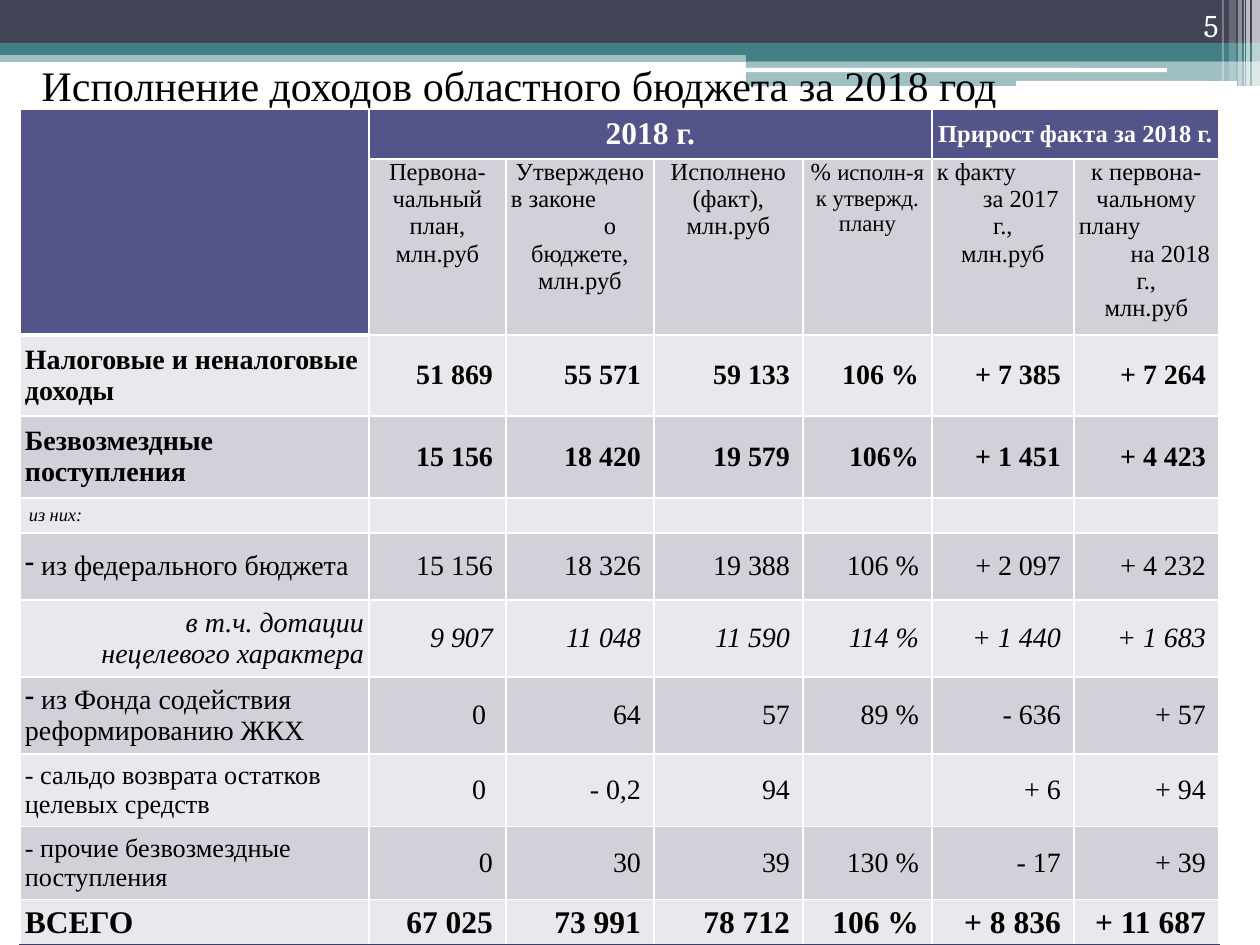
"""Builds the slide on regional budget revenue for 2018."""
from dataclasses import dataclass

from lxml import etree
from pptx import Presentation
from pptx.dml.color import RGBColor
from pptx.enum.shapes import MSO_SHAPE
from pptx.enum.text import MSO_ANCHOR, MSO_AUTO_SIZE, PP_ALIGN
from pptx.oxml.ns import qn
from pptx.util import Pt

LEFT, CENTER, RIGHT = PP_ALIGN.LEFT, PP_ALIGN.CENTER, PP_ALIGN.RIGHT
TOP, MIDDLE, BOTTOM = MSO_ANCHOR.TOP, MSO_ANCHOR.MIDDLE, MSO_ANCHOR.BOTTOM
RECTANGLE, ROUNDED = MSO_SHAPE.RECTANGLE, MSO_SHAPE.ROUNDED_RECTANGLE
PIXELS_PER_INCH = 126


@dataclass(frozen=True)
class Theme:
    font: str = "Times New Roman"
    number_font: str = "Cambria"
    white: str = "FFFFFF"
    black: str = "000000"
    slate: str = "424456"
    teal: str = "438086"
    header: str = "53548A"
    dark_row: str = "D1D1DA"
    light_row: str = "E9E9ED"
    total_line: str = "3E3F68"
    title: float = 24
    large: float = 18
    body: float = 16
    compact: float = 15
    label: float = 14
    fine: float = 13
    tiny: float = 10.5


@dataclass(frozen=True)
class Line:
    text: str
    align: int = CENTER
    indent: int = 0
    tail: str = ""


@dataclass(frozen=True)
class Row:
    label: str
    values: tuple
    size: float = Theme.body
    value_size: float = Theme.body
    bold: bool = False
    italic: bool = False
    italic_values: bool = False
    align: int = LEFT
    indent: int = 0
    bullet: bool = False


COLUMNS = (349, 137, 148, 149, 129, 142, 145)
HEIGHTS = (50, 176, 81, 82, 35, 67, 77, 77, 73, 73, 45)
BARS = (
    (0, 50, 1260, 12, Theme.teal, 50), (0, 0, 1260, 43, Theme.slate, 100),
    (0, 43, 1260, 12, Theme.teal, 100), (746, 49, 514, 12, Theme.teal, 100),
    (746, 61, 514, 25, Theme.teal, 50),
)
GROOVES = ((745, 68, 422, 4), (1016, 81, 221, 5))
STRIPES = ((1252, 8, 86, 65), (1246, 4, 86, 65), (1244, 1, 86, 60),
           (1238, 4, 86, 40), (1229, 7, 81, 20), (1222, 2, 81, 30))
UNIT = Line("млн.руб")
HEADINGS = (
    (Line("Первона-чальный план,"), UNIT),
    (Line("Утверждено"), Line("в законе", LEFT), Line("о", indent=60), Line("бюджете,"), UNIT),
    (Line("Исполнено (факт),"), UNIT),
    (Line("% ", tail="исполн-я к утвержд. плану"),),
    (Line("к факту", LEFT), Line("за 2017", indent=36), Line("г.,"), UNIT),
    (Line("к первона-чальному"), Line("плану", LEFT), Line("на 2018", indent=48),
     Line("г.,"), UNIT),
)
ROWS = (
    Row("Налоговые и неналоговые доходы",
        ("51 869", "55 571", "59 133", "106 %", "+ 7 385", "+ 7 264"), bold=True),
    Row("Безвозмездные поступления",
        ("15 156", "18 420", "19 579", "106%", "+ 1 451", "+ 4 423"), bold=True),
    Row("из них:", ("",) * 6, Theme.tiny, Theme.tiny, italic=True, indent=4),
    Row(" из федерального бюджета",
        ("15 156", "18 326", "19 388", "106 %", "+ 2 097", "+ 4 232"), bullet=True),
    Row("в т.ч. дотации нецелевого характера",
        ("9 907", "11 048", "11 590", "114 %", "+ 1 440", "+ 1 683"),
        italic=True, italic_values=True, align=RIGHT, indent=60),
    Row(" из Фонда содействия реформированию ЖКХ",
        ("0 ", "64", "57", "89 %", "- 636", "+ 57"), bullet=True),
    Row("- сальдо возврата остатков целевых средств",
        ("0 ", "- 0,2", "94", "", "+ 6", "+ 94"), Theme.compact),
    Row("- прочие безвозмездные поступления",
        ("0", "30", "39", "130 %", "- 17", "+ 39"), Theme.compact),
    Row("ВСЕГО", ("67 025", "73 991", "78 712", "106 %", "+ 8 836", "+ 11 687"),
        Theme.large, Theme.large, bold=True),
)


def px(length):
    """Turns pixels into EMU."""
    return round(length * 914400 / PIXELS_PER_INCH)


def write(paragraph, text, size=Theme.body, color=Theme.black, font=Theme.font,
          bold=False, italic=False, align=LEFT, indent=0, bullet=False):
    """Adds a formatted run to a paragraph."""
    paragraph.alignment = align
    properties = paragraph._p.get_or_add_pPr()
    properties.set("marL", str(px(indent)))
    properties.set("indent", "0")
    if bullet:
        etree.SubElement(properties, qn("a:buChar"), char="-")
    if not text:
        etree.SubElement(paragraph._p, qn("a:endParaRPr"), sz=str(int(size * 100)))
        return
    run = paragraph.add_run()
    run.text = text
    run.font.size, run.font.name = Pt(size), font
    run.font.bold, run.font.italic = bold, italic
    run.font.color.rgb = RGBColor.from_string(color)


class SlideBuilder:
    """Holds the theme and the current slide."""

    def __init__(self, slide, theme):
        self.slide, self.theme = slide, theme

    def bar(self, left, top, width, height, color, opacity=100, kind=RECTANGLE):
        """Adds a borderless bar."""
        shape = self.slide.shapes.add_shape(kind, px(left), px(top), px(width), px(height))
        shape.shadow.inherit = False
        shape.line.fill.background()
        shape.fill.solid()
        shape.fill.fore_color.rgb = RGBColor.from_string(color)
        if opacity < 100:
            color_element = shape.element.spPr.find(".//" + qn("a:srgbClr"))
            etree.SubElement(color_element, qn("a:alpha"), val=str(opacity * 1000))

    def title(self, text, left, top, width, height):
        """Fills the title placeholder and brings it to the front."""
        shape = self.slide.shapes.title
        shape.left, shape.top, shape.width, shape.height = map(px, (left, top, width, height))
        frame = shape.text_frame
        frame.auto_size, frame.vertical_anchor = MSO_AUTO_SIZE.NONE, TOP
        frame.paragraphs[0].line_spacing = 0.9
        write(frame.paragraphs[0], text, size=self.theme.title)
        self.slide.shapes.element.append(shape.element)

    def number(self, text, left, top, width, height):
        """Adds the page number."""
        shape = self.slide.shapes.add_textbox(px(left), px(top), px(width), px(height))
        frame = shape.text_frame
        frame.word_wrap, frame.vertical_anchor = True, BOTTOM
        write(frame.paragraphs[0], text, size=self.theme.large, color=self.theme.white,
              font=self.theme.number_font, align=RIGHT)

    def table(self, left, top):
        """Adds the empty table grid."""
        table = self.slide.shapes.add_table(len(HEIGHTS), len(COLUMNS), px(left), px(top),
                                            px(sum(COLUMNS)), px(sum(HEIGHTS))).table
        for column, width in zip(table.columns, COLUMNS):
            column.width = px(width)
        for row, height in zip(table.rows, HEIGHTS):
            row.height = px(height)
        return table

    def paint(self, cell, fill, bottom=(Theme.white, 1)):
        """Sets the borders and the fill of a cell."""
        properties = cell._tc.get_or_add_tcPr()
        thin = (self.theme.white, 1)
        for side, (color, width) in zip("LRTB", (thin, thin, thin, bottom)):
            line = etree.SubElement(properties, qn("a:ln" + side), w=str(Pt(width)))
            solid = etree.SubElement(line, qn("a:solidFill"))
            etree.SubElement(solid, qn("a:srgbClr"), val=color)
        cell.fill.solid()
        cell.fill.fore_color.rgb = RGBColor.from_string(fill)

    def cell(self, cell, text, side=13, edge=6, **text_format):
        """Writes one line of text in a vertically centred cell."""
        cell.vertical_anchor = MIDDLE
        cell.margin_left = cell.margin_right = px(side)
        cell.margin_top = cell.margin_bottom = px(edge)
        write(cell.text_frame.paragraphs[0], text, **text_format)

    def heading(self, cell, lines):
        """Writes a column heading line by line."""
        cell.margin_left = cell.margin_right = px(5)
        cell.margin_top = cell.margin_bottom = 0
        frame = cell.text_frame
        for index, line in enumerate(lines):
            paragraph = frame.add_paragraph() if index else frame.paragraphs[0]
            write(paragraph, line.text, size=self.theme.label, align=line.align,
                  indent=line.indent)
            if line.tail:
                write(paragraph, line.tail, size=self.theme.fine, align=line.align)

    def revenue_table(self, left, top):
        """Adds the table of budget revenue."""
        theme, table = self.theme, self.table(left, top)
        last = len(HEIGHTS) - 1
        for row in range(len(HEIGHTS)):
            for column in range(len(COLUMNS)):
                is_header = row == 0 or (row == 1 and column == 0)
                fill = theme.header if is_header else (theme.light_row, theme.dark_row)[row % 2]
                bottom = (theme.total_line if row == last else theme.white,
                          3 if row == last or (row < 2 and column == 0) else 1)
                self.paint(table.cell(row, column), fill, bottom)
        for start, end in (((0, 0), (1, 0)), ((0, 1), (0, 4)), ((0, 5), (0, 6))):
            table.cell(*start).merge(table.cell(*end))
        header = dict(color=theme.white, bold=True, align=CENTER)
        self.cell(table.cell(0, 1), "2018 г.", size=theme.large, **header)
        self.cell(table.cell(0, 5), "Прирост факта за 2018 г.", 5, 5, size=theme.label, **header)
        for column, lines in enumerate(HEADINGS, 1):
            self.heading(table.cell(1, column), lines)
        for index, row in enumerate(ROWS, 2):
            self.cell(table.cell(index, 0), row.label, 5, 5, size=row.size, bold=row.bold,
                      italic=row.italic, align=row.align, indent=row.indent, bullet=row.bullet)
            for column, value in enumerate(row.values, 1):
                self.cell(table.cell(index, column), value, size=row.value_size,
                          bold=row.bold, italic=row.italic_values, align=RIGHT)


def main():
    """Builds and saves the presentation."""
    presentation = Presentation()
    presentation.slide_width, presentation.slide_height = px(1260), px(945)
    builder = SlideBuilder(presentation.slides.add_slide(presentation.slide_layouts[5]), Theme())
    for bar in BARS:
        builder.bar(*bar)
    for groove in GROOVES:
        builder.bar(*groove, Theme.white, kind=ROUNDED)
    for left, width, height, opacity in STRIPES:
        builder.bar(left, 0, width, height, Theme.white, opacity)
    builder.title("Исполнение доходов областного бюджета за 2018 год", 29, 59, 1275, 58)
    builder.revenue_table(20, 109)
    builder.number("5", 1126, 0, 105, 50)
    presentation.save("out.pptx")


if __name__ == "__main__":
    main()
